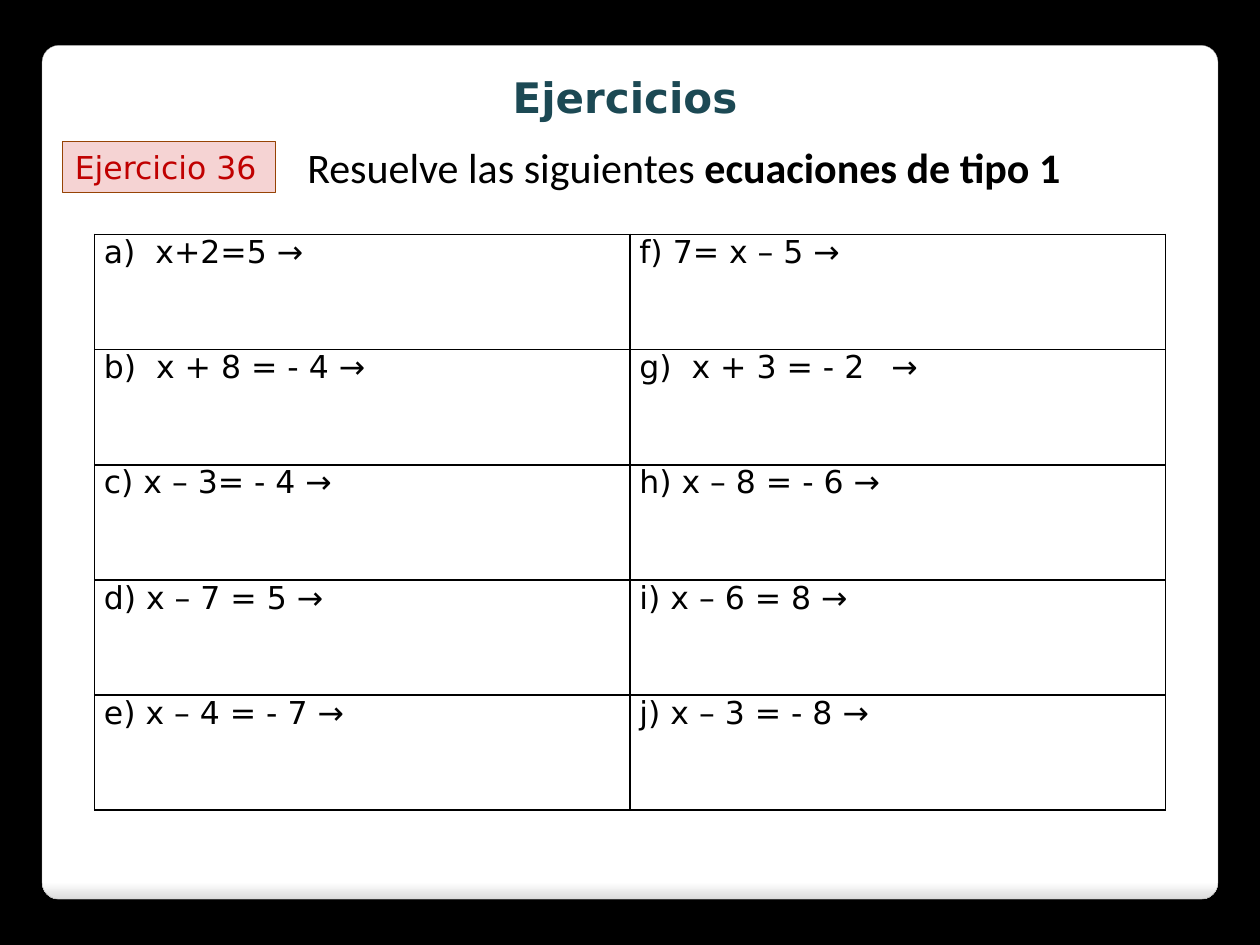
from lxml import etree
from pptx import Presentation
from pptx.dml.color import RGBColor
from pptx.enum.shapes import MSO_SHAPE as SHAPE
from pptx.enum.text import MSO_AUTO_SIZE as AUTO, PP_ALIGN as ALIGN
from pptx.oxml import parse_xml
from pptx.oxml.ns import nsdecls
from pptx.util import Pt

BLACK = RGBColor(0x00, 0x00, 0x00)
WHITE = RGBColor(0xFF, 0xFF, 0xFF)
SILVER = RGBColor(0xDA, 0xDA, 0xDA)
GRAY = RGBColor(0xA4, 0xA4, 0xA4)
TEAL = RGBColor(0x1C, 0x49, 0x54)
PINK = RGBColor(0xF5, 0xD3, 0xD3)
BROWN = RGBColor(0x96, 0x43, 0x05)
RED = RGBColor(0xC0, 0x00, 0x00)

TITLE = {"name": "DejaVu Sans", "size": Pt(24), "bold": True}
LABEL = {"name": "DejaVu Sans", "size": Pt(18)}
TASK = {"name": "Calibri", "size": Pt(24)}
MARGINS = {"margin_left": Pt(5.4), "margin_right": Pt(5.4),
           "margin_top": 0, "margin_bottom": 0}


def add_run(p, text, color, font):
    r = p.add_run()
    r.text = text
    r.font.color.rgb = color
    for key, value in font.items():
        setattr(r.font, key, value)


def start_text(s, align=ALIGN.LEFT):
    tf = s.text_frame
    tf.word_wrap = True
    tf.auto_size = AUTO.SHAPE_TO_FIT_TEXT
    p = tf.paragraphs[0]
    p.alignment = align
    return p


prs = Presentation()
prs.slide_width, prs.slide_height = Pt(720), Pt(540)
sp = prs.slides.add_slide(prs.slide_layouts[6])
sp.background.fill.solid()
sp.background.fill.fore_color.rgb = BLACK

panel = sp.shapes.add_shape(SHAPE.ROUNDED_RECTANGLE, Pt(24), Pt(25.9), Pt(672), Pt(488))
panel.adjustments[0] = 0.02
panel.shadow.inherit = False
panel.fill.gradient()
panel.fill.gradient_angle = 270
for stop, position, color in zip(panel.fill.gradient_stops, (0.98, 1), (WHITE, SILVER)):
    stop.position = position
    stop.color.rgb = color
panel.line.color.rgb = GRAY
panel.line.width = Pt(0.16)

title = sp.shapes.add_textbox(Pt(25.2), Pt(37.5), Pt(664), Pt(36))
add_run(start_text(title, ALIGN.CENTER), "Ejercicios", TEAL, TITLE)

label = sp.shapes.add_shape(SHAPE.RECTANGLE, Pt(35.7), Pt(80.7), Pt(121.7), Pt(29.2))
label.shadow.inherit = False
label.fill.solid()
label.fill.fore_color.rgb = PINK
label.line.color.rgb = BROWN
label.line.width = Pt(0.75)
add_run(start_text(label), "Ejercicio 36", RED, LABEL)

task = sp.shapes.add_textbox(Pt(168.5), Pt(77.2), Pt(514), Pt(36))
p = start_text(task)
add_run(p, "Resuelve las siguientes ", BLACK, TASK)
add_run(p, "ecuaciones de tipo 1", BLACK, {**TASK, "bold": True})

equations = [
    ("a)  x+2=5 →", "f) 7= x – 5 →"),
    ("b)  x + 8 = - 4 →", "g)  x + 3 = - 2\t→"),
    ("c) x – 3= - 4 →", "h) x – 8 = - 6 →"),
    ("d) x – 7 = 5 →", "i) x – 6 = 8 →"),
    ("e) x – 4 = - 7 →", "j) x – 3 = - 8 →"),
]
table = sp.shapes.add_table(5, 2, Pt(54), Pt(134), Pt(612), Pt(329)).table
table.first_row = table.horz_banding = False
for row, texts in zip(table.rows, equations):
    for cell, text in zip(row.cells, texts):
        for key, value in MARGINS.items():
            setattr(cell, key, value)
        p = cell.text_frame.paragraphs[0]
        p.space_after = Pt(18)
        add_run(p, text, BLACK, LABEL)
        tcPr = cell._tc.get_or_add_tcPr()
        for side in ("lnL", "lnR", "lnT", "lnB"):
            ln = parse_xml(f'<a:{side} {nsdecls("a")} w="{Pt(1)}"/>')
            fill = etree.SubElement(ln, ln.tag.replace(side, "solidFill"))
            etree.SubElement(fill, ln.tag.replace(side, "srgbClr"), val=str(BLACK))
            tcPr.append(ln)
        cell.fill.background()

prs.save("out.pptx")
